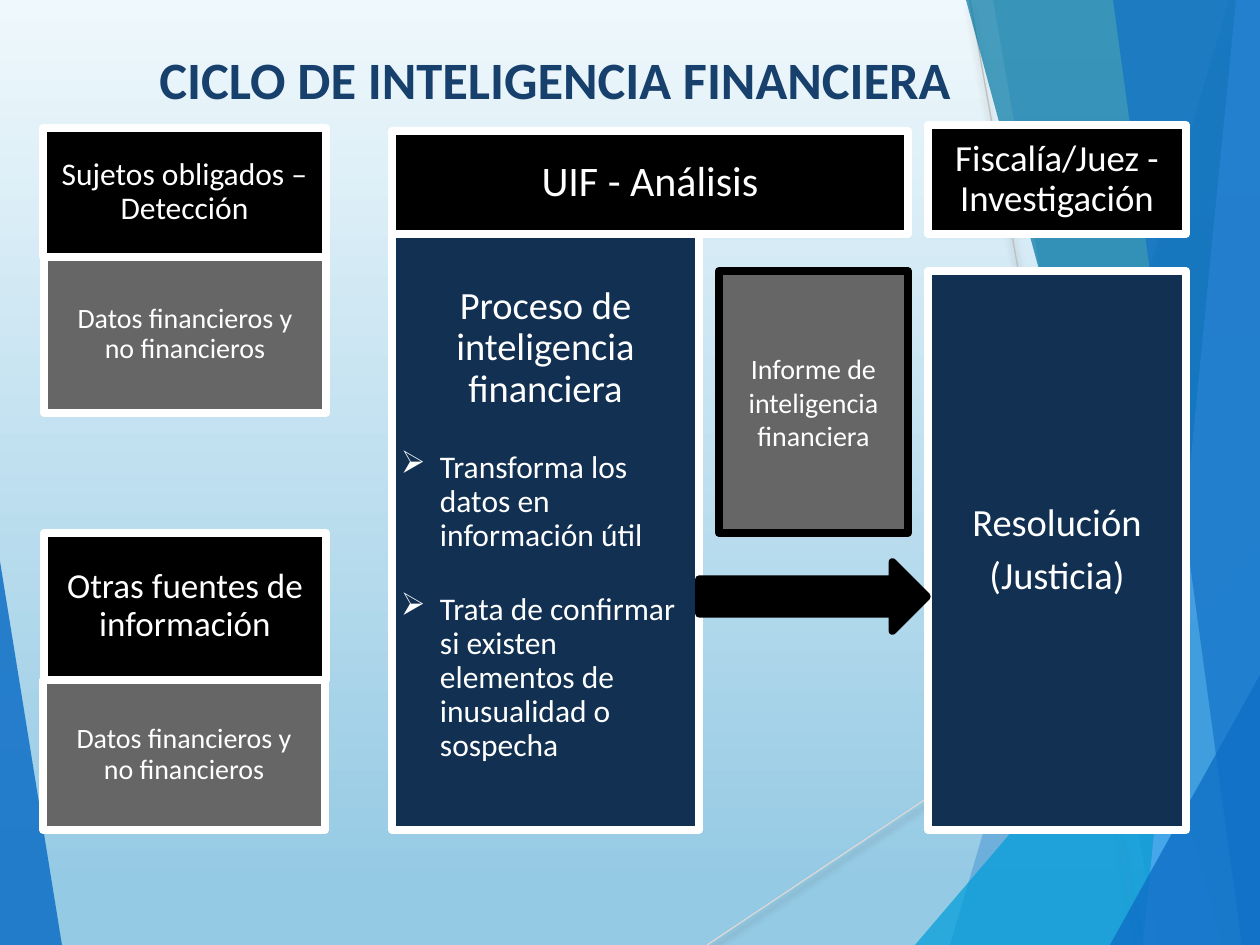
import lxml.etree
import pptx
import pptx.dml.color
import pptx.enum.shapes
import pptx.enum.text
import pptx.oxml
import pptx.oxml.ns
import pptx.util

SCALE = 914400 / 126
FONT = "Calibri"
HUES = {
    "black": "000000", "white": "FFFFFF", "gray": "666666", "navy": "113052",
    "title": "17406D", "top": "EFF8FC", "base": "95CAE4", "blue": "0F6FC6",
    "cyan": "009DD9", "teal": "0076A3", "sky": "59AAF2",
    "pale": "D9D9D9", "silver": "BFBFBF",
}


def px(size):
    """Turn pixels into EMU."""
    return pptx.util.Emu(round(size * SCALE))


def hue(name):
    """Look up a colour by name."""
    return pptx.dml.color.RGBColor.from_string(HUES[name])


def add_node(parent, tag, **attrs):
    """Append a DrawingML element and return it."""
    node = lxml.etree.SubElement(parent, pptx.oxml.ns.qn("a:" + tag))
    for key, value in attrs.items():
        node.set(key, str(value))
    return node


def paint(shape, fill, line=None, alpha=100):
    """Set the fill, its opacity and the outline of a shape."""
    shape.shadow.inherit = False
    shape.fill.solid()
    shape.fill.fore_color.rgb = hue(fill)
    if alpha < 100:
        color = shape.fill._xPr.find(".//" + pptx.oxml.ns.qn("a:srgbClr"))
        add_node(color, "alpha", val=alpha * 1000)
    if line:
        shape.line.color.rgb = hue(line)
        shape.line.width = pptx.util.Pt(4.33)
        add_node(shape.line._get_or_add_ln(), "round")
    else:
        shape.line.fill.background()


def set_bullet(para):
    """Give a paragraph an arrow bullet with a hanging indent."""
    props = para._p.get_or_add_pPr()
    props.set("marL", str(px(39)))
    props.set("indent", str(-px(39)))
    add_node(props, "buChar", char="➢")


def write(shape, lines, size, color="white", bold=False, inset=18, top=None,
          anchor="MIDDLE", align="CENTER", space=0.9, gap=0, bullets=(), small=18):
    """Fill a shape with formatted lines, then bulleted ones."""
    frame = shape.text_frame
    frame.word_wrap = True
    frame.vertical_anchor = pptx.enum.text.MSO_ANCHOR[anchor]
    frame.margin_left = frame.margin_right = frame.margin_bottom = px(inset)
    frame.margin_top = px(inset if top is None else top)
    for index, words in enumerate([*lines, *bullets]):
        marked = index >= len(lines)
        para = frame.add_paragraph() if index else frame.paragraphs[0]
        para.alignment = pptx.enum.text.PP_ALIGN["LEFT" if marked else align]
        para.line_spacing = space
        if index:
            para.space_before = pptx.util.Pt(gap)
        if marked:
            set_bullet(para)
        run = para.add_run()
        run.text = words
        run.font.name = FONT
        run.font.size = pptx.util.Pt(small if marked else size)
        run.font.bold = bold
        run.font.color.rgb = hue(color)


def add_box(slide, box, fill, lines, size, line="white", **style):
    """Add a rectangle with text."""
    kind = pptx.enum.shapes.MSO_SHAPE.RECTANGLE
    shape = slide.shapes.add_shape(kind, *map(px, box))
    paint(shape, fill, line)
    write(shape, lines, size, **style)


def add_facet(slide, points, fill, alpha):
    """Add a see-through polygon."""
    pen = slide.shapes.build_freeform(*points[0], scale=SCALE)
    pen.add_line_segments(points[1:], close=True)
    paint(pen.convert_to_shape(), fill, alpha=alpha)


def add_ray(slide, ends, color):
    """Add a thin line with a soft shadow."""
    kind = pptx.enum.shapes.MSO_CONNECTOR.STRAIGHT
    ray = slide.shapes.add_connector(kind, *map(px, ends))
    ray.line.color.rgb = hue(color)
    ray.line.width = pptx.util.Pt(0.75)
    effects = add_node(ray._element.spPr, "effectLst")
    shade = add_node(effects, "outerShdw", blurRad=pptx.util.Pt(4),
                     dist=pptx.util.Pt(3), dir=5400000, rotWithShape=0)
    add_node(add_node(shade, "srgbClr", val=HUES["black"]), "alpha", val=35000)


def add_scene(slide):
    """Draw the gradient and the faceted edges."""
    fill = slide.background.fill
    fill.gradient()
    fill.gradient_angle = 270
    for stop, (spot, name) in zip(fill.gradient_stops, [(0, "top"), (0.94, "base")]):
        stop.position = spot
        stop.color.rgb = hue(name)
    add_facet(slide, [(0, 561), (62, 945), (0, 945)], "blue", 85)
    add_ray(slide, (707, 945, 1260, 576), "pale")
    add_ray(slide, (970, 0, 1139, 945), "silver")
    facets = [
        ((1229, 0), (950, 945), "blue", 30),
        ((993, 0), (1158, 945), "blue", 20),
        ((1260, 541), (915, 945), "cyan", 72),
        ((966, 0), (1222, 945), "teal", 70),
        ((1236, 0), (1143, 945), "sky", 70),
        ((1113, 0), (1242, 945), "blue", 65),
        ((1260, 675), (1110, 945), "blue", 80),
    ]
    for head, foot, color, alpha in facets:
        add_facet(slide, [head, foot, (1260, 945), (1260, head[1])], color, alpha)


def add_cycle(slide):
    """Draw the stages of the cycle."""
    data = ["Datos financieros y no financieros"]
    add_box(slide, (44, 256, 282, 157), "gray", data, 16)
    add_box(slide, (43, 128, 283, 129), "black", ["Sujetos obligados –Detección"], 18)
    add_box(slide, (392, 131, 516, 103), "black", ["UIF - Análisis"], 24)
    add_box(slide, (928, 125, 258, 109), "black", ["Fiscalía/Juez - Investigación"], 21,
            inset=9)
    add_box(slide, (928, 271, 258, 559), "navy", ["Resolución", "(Justicia)"], 22, gap=7)
    add_box(slide, (44, 533, 282, 147), "black", ["Otras fuentes de información"], 20)
    add_box(slide, (43, 680, 282, 150), "gray", data, 16)
    add_box(slide, (392, 234, 307, 596), "navy", ["Proceso de inteligencia financiera"], 22,
            inset=9, top=52, anchor="TOP", gap=23,
            bullets=["Transforma los datos en información útil",
                     "Trata de confirmar si existen elementos de inusualidad o sospecha"])
    kind = pptx.enum.shapes.MSO_SHAPE.RIGHT_ARROW
    arrow = slide.shapes.add_shape(kind, *map(px, (699, 562, 228, 69)))
    paint(arrow, "black", "black")
    add_box(slide, (719, 271, 189, 262), "gray", ["Informe de inteligencia financiera"], 16,
            line="black", inset=13, space=1)


def main():
    """Build and save the slide."""
    deck = pptx.Presentation()
    deck.slide_width, deck.slide_height = px(1260), px(945)
    slide = deck.slides.add_slide(deck.slide_layouts[6])
    add_scene(slide)
    title = slide.shapes.add_textbox(*map(px, (0, 16, 1111, 100)))
    write(title, ["CICLO DE INTELIGENCIA FINANCIERA"], 30, color="title", bold=True,
          inset=6, anchor="BOTTOM", space=1)
    add_cycle(slide)
    deck.save("out.pptx")


if __name__ == "__main__":
    main()
